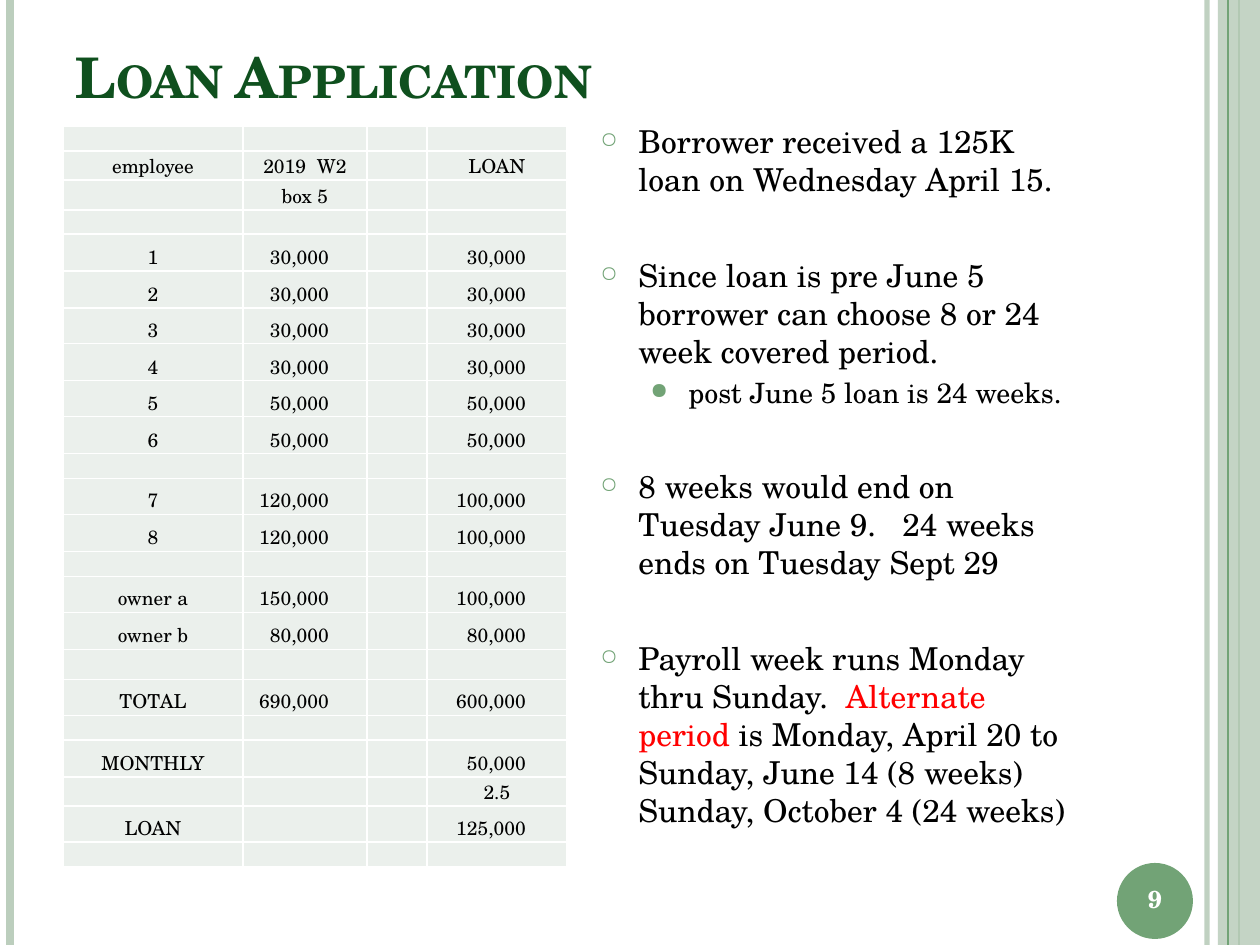
from itertools import pairwise

from lxml import etree
from pptx import Presentation
from pptx import util as u
from pptx.dml.color import RGBColor
from pptx.enum import shapes, text
from pptx.oxml import ns

FONT = "TeX Gyre Schola"
WHITE = RGBColor(0xFF, 0xFF, 0xFF)
BLACK = RGBColor(0, 0, 0)
RED = RGBColor(0xFF, 0, 0)
DARK_GREEN = RGBColor(0x0F, 0x50, 0x1E)
GREEN = RGBColor(0x72, 0xA3, 0x76)
PALE_GREEN = RGBColor(0xBC, 0xCE, 0xBD)
CELL_GREEN = RGBColor(0xEB, 0xF0, 0xEC)

EMU_PER_PX = 914400 / 126
WIDTH, HEIGHT = 1260, 945


def px(length):
    return u.Emu(round(length * EMU_PER_PX))


def add_element(parent, tag, **attributes):
    element = etree.SubElement(parent, ns.qn(tag))
    for name, value in attributes.items():
        element.set(name, str(value))
    return element


def set_opacity(fill_parent, percent):
    color = next(fill_parent.iter(ns.qn("a:srgbClr")))
    add_element(color, "a:alpha", val=percent * 1000)


class SlideBuilder:
    def __init__(self, slide):
        self.slide = slide

    def style(self, paragraph, size, color=BLACK, bold=False, align=None):
        paragraph.font.name = FONT
        paragraph.font.size = u.Pt(size)
        paragraph.font.bold = bold
        paragraph.font.color.rgb = color
        paragraph.alignment = align

    def stripe(self, x, weight, color, opacity=100):
        """Vertical line over the full slide height."""
        line = self.slide.shapes.add_connector(
            shapes.MSO_CONNECTOR.STRAIGHT, px(x), 0, px(x), px(HEIGHT))
        line.line.width = u.Pt(weight)
        line.line.color.rgb = color
        add_element(line._element.spPr, "a:effectLst")
        if opacity < 100:
            set_opacity(line._element.spPr, opacity)

    def shape(self, kind, box, color, opacity=100):
        shape = self.slide.shapes.add_shape(kind, *map(px, box))
        shape.shadow.inherit = False
        shape.fill.solid()
        shape.fill.fore_color.rgb = color
        shape.line.fill.background()
        if opacity < 100:
            set_opacity(shape._element.spPr, opacity)

    def title(self, box, wording):
        title = self.slide.shapes.title
        title.left, title.top, title.width, title.height = map(px, box)
        frame = title.text_frame
        frame.text = wording
        frame.auto_size = text.MSO_AUTO_SIZE.NONE
        frame.vertical_anchor = text.MSO_ANCHOR.BOTTOM
        paragraph = frame.paragraphs[0]
        self.style(paragraph, 32, DARK_GREEN, True, text.PP_ALIGN.LEFT)
        paragraph.runs[0]._r.get_or_add_rPr().set("cap", "small")

    def text_frame(self, box):
        frame = self.slide.shapes.add_textbox(*map(px, box)).text_frame
        frame.word_wrap = True
        return frame

    def page_number(self, box, number):
        frame = self.text_frame(box)
        frame.vertical_anchor = text.MSO_ANCHOR.MIDDLE
        frame.text = number
        self.style(frame.paragraphs[0], 14, WHITE, True, text.PP_ALIGN.CENTER)

    def bullets(self, box, items):
        """Each item is (level, space before in points, [(wording, color), ...])."""
        looks = [("○", 70, 38, 18), ("●", 80, 88, 16)]
        frame = self.text_frame(box)
        for index, (level, space, runs) in enumerate(items):
            symbol, percent, indent, size = looks[level]
            paragraph = frame.add_paragraph() if index else frame.paragraphs[0]
            paragraph.level = level
            properties = paragraph._p.get_or_add_pPr()
            properties.set("marL", str(px(indent)))
            properties.set("indent", str(px(-38)))
            add_element(add_element(properties, "a:buClr"), "a:srgbClr", val=GREEN)
            add_element(properties, "a:buSzPct", val=percent * 1000)
            add_element(properties, "a:buChar", char=symbol)
            paragraph.space_before = u.Pt(space)
            self.style(paragraph, size)
            for wording, color in runs:
                run = paragraph.add_run()
                run.text = wording
                if color != BLACK:
                    run.font.color.rgb = color

    def cell(self, cell, wording, number_margin):
        """Amounts align right at number_margin; other wording is centred."""
        is_amount = "," in wording
        cell.margin_left = cell.margin_top = px(1)
        cell.margin_right = px(number_margin if is_amount else 1)
        cell.margin_bottom = 0
        cell.vertical_anchor = text.MSO_ANCHOR.BOTTOM
        properties = cell._tc.get_or_add_tcPr()
        for side in "LRTB":
            border = add_element(properties, f"a:ln{side}", w=u.Pt(1))
            add_element(add_element(border, "a:solidFill"), "a:srgbClr", val=WHITE)
        cell.fill.solid()
        cell.fill.fore_color.rgb = CELL_GREEN
        paragraph = cell.text_frame.paragraphs[0]
        if wording:
            paragraph.text = wording
            align = text.PP_ALIGN.RIGHT if is_amount else text.PP_ALIGN.CENTER
            self.style(paragraph, 11, align=align)
        else:
            add_element(paragraph._p, "a:endParaRPr", sz=800)

    def table(self, left, row_edges, widths, number_margins, rows):
        height = row_edges[-1] - row_edges[0]
        table = self.slide.shapes.add_table(
            len(rows), len(widths), px(left), px(row_edges[0]),
            px(sum(widths)), px(height)).table
        table.first_row = table.horz_banding = False
        for column, width in zip(table.columns, widths):
            column.width = px(width)
        for row, (top, bottom) in zip(table.rows, pairwise(row_edges)):
            row.height = px(bottom - top)
        for row, wordings in zip(table.rows, rows):
            for cell, wording, margin in zip(row.cells, wordings, number_margins):
                self.cell(cell, wording, margin)


BLANK = ("", "", "", "")
ROWS = [
    BLANK,
    ("employee", "2019  W2", "", "LOAN"),
    ("", "box 5", "", ""),
    BLANK,
    *[(str(n), "30,000", "", "30,000") for n in range(1, 5)],
    *[(str(n), "50,000", "", "50,000") for n in (5, 6)],
    BLANK,
    *[(str(n), "120,000", "", "100,000") for n in (7, 8)],
    BLANK,
    ("owner a", "150,000", "", "100,000"),
    ("owner b", "80,000", "", "80,000"),
    BLANK,
    ("TOTAL", "690,000", "", "600,000"),
    BLANK,
    ("MONTHLY", "", "", "50,000"),
    ("", "", "", "2.5"),
    ("LOAN", "", "", "125,000"),
    BLANK,
]
ROW_EDGES = [126, 151, 180, 210, 234, 271, 308, 344, 381, 417, 454, 479,
             515, 552, 577, 613, 650, 680, 716, 741, 778, 807, 843, 868]
GAP = 33.5
BULLETS = [
    (0, 0, [("Borrower received a 125K loan on Wednesday April 15.", BLACK)]),
    (0, GAP, [("Since loan is pre June 5 borrower can choose 8 or 24 week "
               "covered period.", BLACK)]),
    (1, 3, [("post June 5 loan is 24 weeks.", BLACK)]),
    (0, GAP, [("8 weeks would end on Tuesday June 9.   24 weeks ends on "
               "Tuesday Sept 29", BLACK)]),
    (0, GAP, [("Payroll week runs Monday thru Sunday.  ", BLACK),
              ("Alternate period ", RED),
              ("is Monday, April 20 to Sunday, June 14 (8 weeks) "
               "Sunday, October 4 (24 weeks)", BLACK)]),
]


def main():
    presentation = Presentation()
    presentation.slide_width, presentation.slide_height = px(WIDTH), px(HEIGHT)
    builder = SlideBuilder(
        presentation.slides.add_slide(presentation.slide_layouts[5]))
    builder.stripe(1207, 3, PALE_GREEN, 93)
    builder.stripe(10, 4.5, PALE_GREEN)
    builder.stripe(1239, 1.5, GREEN)
    builder.shape(shapes.MSO_SHAPE.RECTANGLE, (1218, 0, 42, HEIGHT), PALE_GREEN, 87)
    builder.stripe(1228, 0.75, GREEN)
    builder.shape(shapes.MSO_SHAPE.OVAL, (1117, 863, 76, 76), GREEN)
    builder.title((63, 38, 1029, 78), "Loan Application")
    builder.page_number((1113, 863, 84, 72), "9")
    builder.table(63, ROW_EDGES, (180, 124, 60, 140), (1, 38, 1, 41), ROWS)
    builder.bullets((588, 116, 504, 735), BULLETS)
    presentation.save("out.pptx")


if __name__ == "__main__":
    main()
